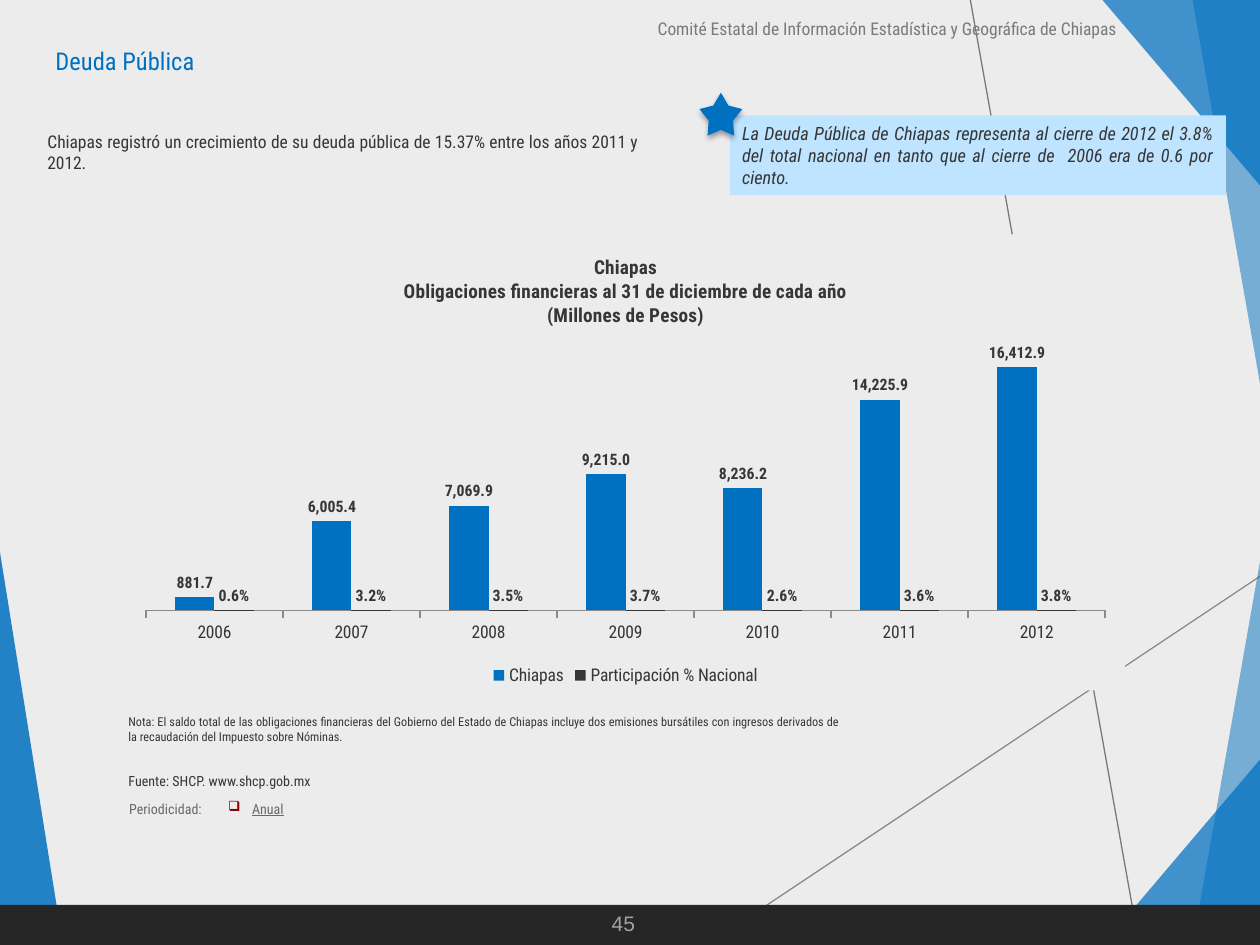
import pptx
import pptx.chart.data
import pptx.dml.color
import pptx.enum.chart
import pptx.enum.shapes
import pptx.enum.text
import pptx.oxml
import pptx.oxml.ns
import pptx.util

Pt = pptx.util.Pt
qn = pptx.oxml.ns.qn
ALIGN = pptx.enum.text.PP_ALIGN
ANCHOR = pptx.enum.text.MSO_ANCHOR
SHAPE = pptx.enum.shapes.MSO_SHAPE
WIDTH, HEIGHT = 720, 540
FONT = "Roboto Condensed"
COLORS = {"blue": "0070C0", "pale": "BFE4FF", "paper": "ECECEC", "band": "262626",
          "text": "363636", "muted": "686868", "header": "7A7A7A", "rule": "8A8A8A",
          "number": "A2A2A2", "bullet": "900000"}
A_NS = pptx.oxml.ns.nsdecls("a")
C_NS = pptx.oxml.ns.nsdecls("c", "a")


def rgb(name):
    return pptx.dml.color.RGBColor.from_string(COLORS[name])


def style(target, formats):
    for name, value in formats.items():
        setattr(target, name, value)


def style_font(font, size, color="text", name=FONT, **formats):
    style(font, {"name": name, "size": Pt(size), **formats})
    font.color.rgb = rgb(color)


def paint(shape, color, opacity=100):
    shape.shadow.inherit = False
    shape.fill.solid()
    shape.fill.fore_color.rgb = rgb(color)
    shape.line.fill.background()
    if opacity < 100:
        tint = shape.element.spPr.find(".//" + qn("a:srgbClr"))
        tint.append(pptx.oxml.parse_xml(f'<a:alpha {A_NS} val="{opacity * 1000}"/>'))


def write(shape, text, size, color="text", align=ALIGN.LEFT, anchor=ANCHOR.TOP,
          wrap=True, inset=None, font=FONT, bullet=False, **formats):
    frame = shape.text_frame
    style(frame, {"word_wrap": wrap, "vertical_anchor": anchor,
                  "auto_size": pptx.enum.text.MSO_AUTO_SIZE.NONE})
    if inset is not None:
        style(frame, dict.fromkeys(
            ("margin_left", "margin_top", "margin_right", "margin_bottom"), Pt(inset)))
    paragraph = frame.paragraphs[0]
    paragraph.alignment = align
    if bullet:
        props = paragraph._p.get_or_add_pPr()
        props.set("marL", str(Pt(13.7)))
        props.set("indent", str(-Pt(13.7)))
        props.append(pptx.oxml.parse_xml(
            f'<a:buClr {A_NS}><a:srgbClr val="{COLORS["bullet"]}"/></a:buClr>'))
        props.append(pptx.oxml.parse_xml(f'<a:buChar {A_NS} char="❑"/>'))
    run = paragraph.add_run()
    run.text = text
    style_font(run.font, size, color, font, **formats)


def add_text(slide, box, text, size, **options):
    write(slide.shapes.add_textbox(*map(Pt, box)), text, size, **options)


def add_block(slide, kind, box, color):
    block = slide.shapes.add_shape(kind, *map(Pt, box))
    paint(block, color)
    return block


def add_facet(slide, points, opacity):
    start, *rest = [(Pt(x), Pt(y)) for x, y in points]
    builder = slide.shapes.build_freeform(*start)
    builder.add_line_segments(rest, close=True)
    paint(builder.convert_to_shape(), "blue", opacity)


def add_backdrop(slide, box):
    left, top, width, height = box
    right, bottom = left + width, top + height
    add_facet(slide, [(left, top + 315.5), (left + 36, bottom), (left, bottom)], 85)
    for start, end, color in (((404, 540), (720.5, 329), "rule"),
                              ((554.5, 0), (651, 540), "header")):
        ray = slide.shapes.add_connector(
            pptx.enum.shapes.MSO_CONNECTOR.STRAIGHT,
            *(Pt(v) for v in (left + start[0], top + start[1], left + end[0], top + end[1])))
        ray.line.color.rgb = rgb(color)
        ray.line.width = Pt(0.75)
        ray.element.spPr.append(pptx.oxml.parse_xml(f"<a:effectLst {A_NS}/>"))
    # The right-hand corners mirror each other
    for edge, inward in ((bottom, -1), (top, 1)):
        for base, rise, opacity in ((90, 106, 72), (38.5, 219, 50)):
            add_facet(slide, [(right - base, edge), (right, edge + inward * rise),
                              (right, edge)], opacity)
    add_block(slide, SHAPE.RECTANGLE, (left, bottom - 23, width, 23), "band")
    add_text(slide, (left + 320.5, top + 6.5, 324.5, 19.5),
             "Comité Estatal de Información Estadística y Geográfica de Chiapas",
             10, color="header", align=ALIGN.RIGHT)
    add_text(slide, (left + 342.5, bottom - 23.5, 28, 21.5), "45", 12,
             color="number", font="Arial", wrap=False)


def add_title(slide, box):
    title = slide.shapes.title
    style(title, dict(zip(("left", "top", "width", "height"), map(Pt, box))))
    write(title, "Deuda Pública", 14, color="blue", anchor=ANCHOR.MIDDLE)


def add_callout(slide, box):
    left, top, _, _ = box
    panel = add_block(slide, SHAPE.RECTANGLE, box, "pale")
    write(panel, "La Deuda Pública de Chiapas representa al cierre de 2012 el 3.8% del total "
          "nacional en tanto que al cierre de  2006 era de 0.6 por ciento.",
          10.5, align=ALIGN.JUSTIFY, italic=True)
    star = add_block(slide, SHAPE.STAR_5_POINT, (left - 17.3, top - 13, 24.5, 24.5), "blue")
    for index, value in enumerate((0.284, 1.051, 1.106)):
        star.adjustments[index] = value
    star.element.spPr.find(qn("a:effectLst")).append(pptx.oxml.parse_xml(
        f'<a:outerShdw {A_NS} blurRad="{Pt(3.1)}" dist="{Pt(1.8)}" dir="5400000" '
        'rotWithShape="0"><a:srgbClr val="000000"><a:alpha val="35000"/></a:srgbClr>'
        '</a:outerShdw>'))


def add_debt_chart(slide, box):
    number, percent = "#,##0.0;[Red]#,##0.0", "0.0%"
    data = pptx.chart.data.CategoryChartData()
    data.categories = [str(year) for year in range(2006, 2013)]
    data.add_series("Chiapas", (881.7, 6005.4, 7069.9, 9215, 8236.2, 14225.9, 16412.9), number)
    data.add_series("Participación % Nacional",
                    (0.006, 0.032, 0.035, 0.037, 0.026, 0.036, 0.038), percent)
    chart = slide.shapes.add_chart(pptx.enum.chart.XL_CHART_TYPE.COLUMN_CLUSTERED,
                                   *map(Pt, box), data).chart
    style_font(chart.font, 10)
    # Title
    heading = chart.chart_title.text_frame
    lines = ("Chiapas", "Obligaciones financieras al 31 de diciembre de cada año",
             "(Millones de Pesos)")
    for index, line in enumerate(lines):
        paragraph = heading.add_paragraph() if index else heading.paragraphs[0]
        run = paragraph.add_run()
        run.text = line
        style_font(run.font, 11, bold=True)
    chart.chart_title.include_in_layout = False
    # Legend and axes
    chart.has_legend = True
    style(chart.legend, {"position": pptx.enum.chart.XL_LEGEND_POSITION.BOTTOM,
                         "include_in_layout": False})
    style_font(chart.legend.font, 10)
    style(chart.value_axis, {"visible": False, "has_major_gridlines": False,
                             "minimum_scale": 0, "maximum_scale": 18000})
    chart.category_axis.major_tick_mark = pptx.enum.chart.XL_TICK_MARK.OUTSIDE
    chart.category_axis.format.line.color.rgb = rgb("rule")
    style_font(chart.category_axis.tick_labels.font, 10)
    # Columns and their labels
    plot = chart.plots[0]
    style(plot, {"gap_width": 150, "overlap": 0, "vary_by_categories": False})
    for series, color, pattern in zip(plot.series, ("blue", "text"), (number, percent)):
        series.format.fill.solid()
        series.format.fill.fore_color.rgb = rgb(color)
        style(series.data_labels, {
            "show_value": True, "number_format": pattern, "number_format_is_linked": False,
            "position": pptx.enum.chart.XL_LABEL_POSITION.OUTSIDE_END})
        style_font(series.data_labels.font, 9, bold=True)
    # Plot position and chart background
    root = chart._chartSpace.find(qn("c:chart"))
    area = root.find(qn("c:plotArea"))
    for old in area.findall(qn("c:layout")):
        area.remove(old)
    places = "".join(f'<c:{key} val="{value}"/>' for key, value in (
        ("layoutTarget", "inner"), ("xMode", "edge"), ("yMode", "edge"),
        ("x", 0.02), ("y", 0.24), ("w", 0.96), ("h", 0.585)))
    area.insert(0, pptx.oxml.parse_xml(
        f"<c:layout {C_NS}><c:manualLayout>{places}</c:manualLayout></c:layout>"))
    root.addnext(pptx.oxml.parse_xml(
        f'<c:spPr {C_NS}><a:solidFill><a:srgbClr val="{COLORS["paper"]}"/></a:solidFill>'
        '<a:ln><a:noFill/></a:ln></c:spPr>'))


def add_sources(slide, box):
    left, top, width, _ = box
    add_text(slide, (left, top, width, 24.5),
             "Nota: El saldo total de las obligaciones financieras del Gobierno del Estado de "
             "Chiapas incluye dos emisiones bursátiles con ingresos derivados de la recaudación "
             "del Impuesto sobre Nóminas.", 7, align=ALIGN.JUSTIFY)
    add_text(slide, (left, top + 33, 148, 17), "Fuente: SHCP. www.shcp.gob.mx", 8)
    for offset, span, text, formats in ((7.5, 48, "Periodicidad:", {}),
                                        (64, 34.5, "Anual", {"bullet": True, "underline": True})):
        tag = add_block(slide, SHAPE.RECTANGLE, (left + offset, top + 52.5, span, 9.5), "paper")
        write(tag, text, 8, color="muted", wrap=False, inset=0, **formats)


def main():
    deck = pptx.Presentation()
    style(deck, {"slide_width": Pt(WIDTH), "slide_height": Pt(HEIGHT)})
    slide = deck.slides.add_slide(deck.slide_layouts[5])
    slide.background.fill.solid()
    slide.background.fill.fore_color.rgb = rgb("paper")
    add_backdrop(slide, (0, 0, WIDTH, HEIGHT))
    add_title(slide, (24.5, 21, 534, 27.5))
    add_text(slide, (20, 71.5, 351.5, 31.5),
             "Chiapas registró un crecimiento de su deuda pública de 15.37% entre los años "
             "2011 y 2012.", 10, align=ALIGN.JUSTIFY)
    add_debt_chart(slide, (72, 134, 571, 260.5))
    add_callout(slide, (417, 66, 283.5, 45.5))
    add_sources(slide, (66.3, 404.7, 420, 62))
    deck.save("out.pptx")


if __name__ == "__main__":
    main()
